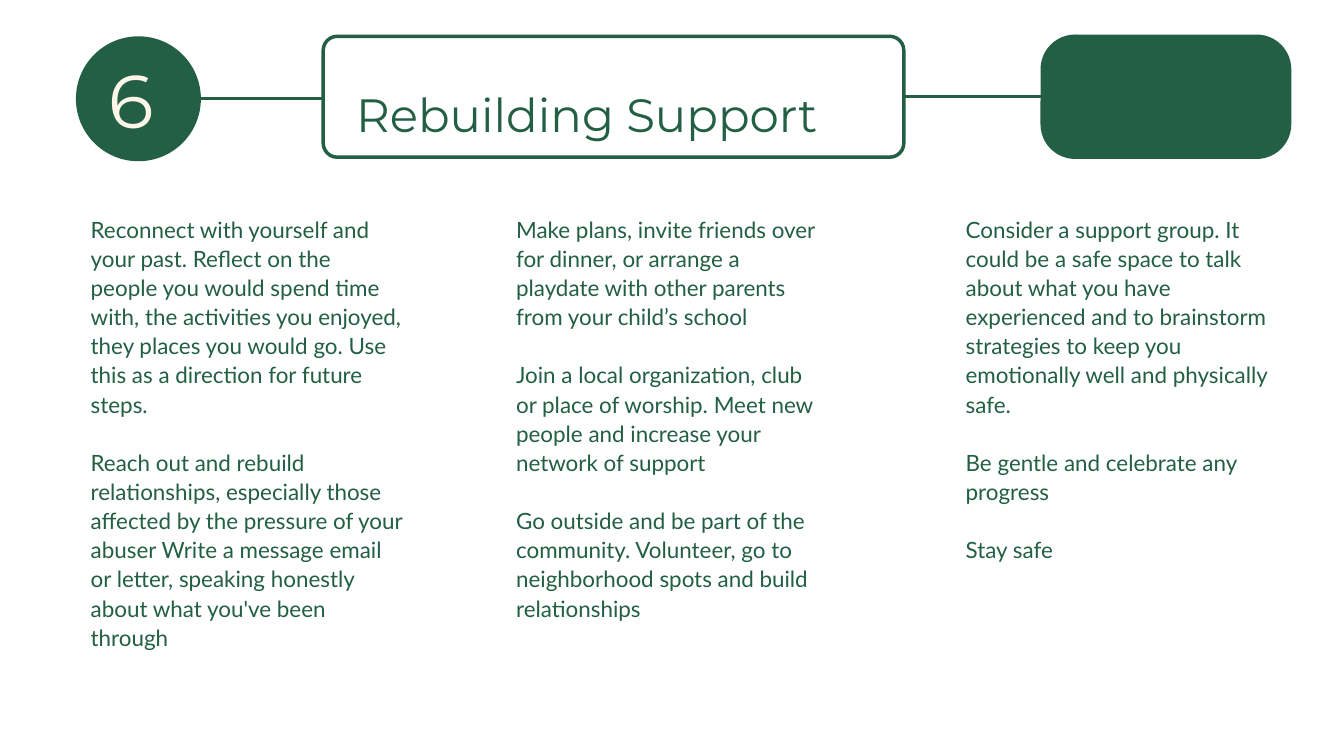
from lxml import etree
from pptx import Presentation
from pptx.dml.color import RGBColor
from pptx.enum.shapes import MSO_CONNECTOR, MSO_SHAPE
from pptx.enum.text import PP_ALIGN
from pptx.oxml.ns import qn
from pptx.util import Inches, Pt

GREEN = RGBColor(0x22, 0x5F, 0x44)
CREAM = RGBColor(0xFF, 0xF6, 0xEA)
STRAIGHT = MSO_CONNECTOR.STRAIGHT
OVAL = MSO_SHAPE.OVAL
ROUNDED = MSO_SHAPE.ROUNDED_RECTANGLE
LEFT, JUSTIFY = PP_ALIGN.LEFT, PP_ALIGN.JUSTIFY

ADVICE = [
    (1.35, [
        "Reconnect with yourself and your past. Reflect on the people you would spend time with, "
        "the activities you enjoyed, they places you would go. Use this as a direction for future steps.",
        "Reach out and rebuild relationships, especially those affected by the pressure of your abuser "
        "Write a message email or letter, speaking honestly about what you've been through",
    ]),
    (7.68, [
        "Make plans, invite friends over for dinner, or arrange a playdate with other parents "
        "from your child’s school",
        "Join a local organization, club or place of worship. Meet new people and increase your "
        "network of support",
        "Go outside and be part of the community. Volunteer, go to neighborhood spots and build relationships",
    ]),
    (14.37, [
        "Consider a support group. It could be a safe space to talk about what you have experienced "
        "and to brainstorm strategies to keep you emotionally well and physically safe.",
        "Be gentle and celebrate any progress",
        "Stay safe",
    ]),
]


def add_text(slide, box, paragraphs, font, size, color, spacing, align=LEFT, gap=0):
    """Place paragraphs without margins in the box, with exact line spacing in points."""
    frame = slide.shapes.add_textbox(*map(Inches, box)).text_frame
    frame.word_wrap = True
    frame.margin_left = frame.margin_right = frame.margin_top = frame.margin_bottom = 0
    frame.text = "\n".join(paragraphs)
    for paragraph in frame.paragraphs:
        paragraph.alignment = align
        paragraph.line_spacing = Pt(spacing)
        paragraph.space_after = Pt(gap)
        for run in paragraph.runs:
            run.font.name = font
            run.font.size = Pt(size)
            run.font.color.rgb = color


def add_panel(slide, preset, box, filled=True, outlined=True, corner=None):
    """Place a green panel, filled or outlined, with an optional corner radius in inches."""
    panel = slide.shapes.add_shape(preset, *map(Inches, box))
    panel.shadow.inherit = False
    if corner:
        panel.adjustments[0] = corner / min(box[2:])
    if filled:
        panel.fill.solid()
        panel.fill.fore_color.rgb = GREEN
    else:
        panel.fill.background()
    if outlined:
        panel.line.color.rgb = GREEN
        panel.line.width = Pt(3.75)
    else:
        panel.line.fill.background()
    return panel


def add_link(slide, start, end):
    """Draw a green straight connector between two points."""
    link = slide.shapes.add_connector(STRAIGHT, *map(Inches, start + end))
    link.line.color.rgb = GREEN
    link.line.width = Pt(3)
    etree.SubElement(link._element.spPr, qn("a:effectLst"))
    return link


def add_header(slide, left, top, width, height):
    """Place the numbered badge, the title frame and the end plate in a row."""
    title_left, title_width, plate_width, badge_size = left + 3.68, 8.64, 3.68, 1.86
    plate_left = left + width - plate_width
    badge_middle, title_middle = top + badge_size / 2, top + height / 2
    title = add_panel(slide, ROUNDED, (title_left, top, title_width, height), filled=False, corner=0.21)
    add_panel(slide, OVAL, (left, top, badge_size, badge_size), outlined=False)
    add_link(slide, (left + badge_size, badge_middle), (title_left, badge_middle))
    add_text(slide, (title_left + 0.49, top + 0.23, 7.88, 1.18), ["Rebuilding Support"],
             "Montserrat", 50, GREEN, 96, JUSTIFY)
    plate = add_panel(slide, ROUNDED, (plate_left, top, plate_width, height), corner=0.49)
    title_link = add_link(slide, (title_left + title_width, title_middle), (plate_left, title_middle))
    title_link.begin_connect(title, 3)
    title_link.end_connect(plate, 1)
    add_text(slide, (left + 0.49, top + 0.26, 0.8, 1.35), ["6"], "Montserrat", 80, CREAM, 96, JUSTIFY)


def add_advice(slide, top, width, height):
    """Place the three columns of advice."""
    for left, tips in ADVICE:
        add_text(slide, (left, top, width, height), tips, "Lato", 24, GREEN, 31.2, gap=31.2)


def main():
    """Build the slide and save it."""
    deck = Presentation()
    deck.slide_width, deck.slide_height = Inches(20), Inches(11.25)
    slide = deck.slides.add_slide(deck.slide_layouts[6])
    add_header(slide, 1.13, 0.54, 18.06, 1.8)
    add_advice(slide, 3.18, 4.64, 6.92)
    deck.save("out.pptx")


if __name__ == "__main__":
    main()
